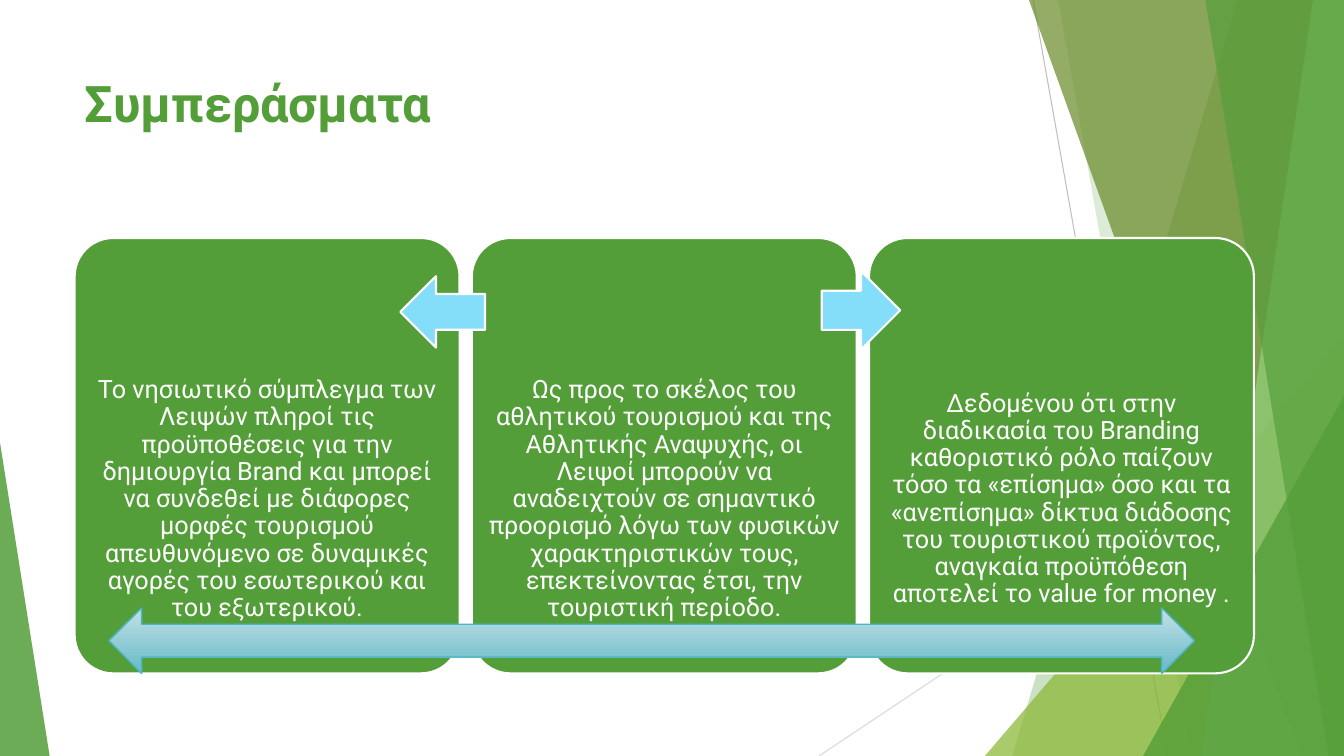
from lxml import etree
from pptx import Presentation
from pptx import util as u
from pptx.dml import color
from pptx.enum import shapes, text
from pptx.oxml import ns

HUES = {
    "green": "549E39", "lime": "8AB833", "olive": "678A26", "mint": "93D07D",
    "white": "FFFFFF", "sky": "84DDF9", "teal": "4AB5C4",
    "pale": "C4E1E6", "deep": "71BECB", "grey": "BFBFBF", "light": "D9D9D9",
}
WIDE, HIGH = 960, 540
FORM = shapes.MSO_SHAPE


class Deck:
    font = "Roboto"

    def __init__(self):
        self.show = Presentation()
        self.show.slide_width, self.show.slide_height = u.Pt(WIDE), u.Pt(HIGH)
        self.slide = self.show.slides.add_slide(self.show.slide_layouts[6])

    def hue(self, name):
        return color.RGBColor.from_string(HUES[name])

    def paint(self, item, fill, alpha=100, line=None, width=1.5):
        item.shadow.inherit = False
        item.fill.solid()
        item.fill.fore_color.rgb = self.hue(fill)
        if alpha < 100:
            tone = item._element.spPr.find(".//" + ns.qn("a:srgbClr"))
            etree.SubElement(tone, ns.qn("a:alpha"), val=str(alpha * 1000))
        if line:
            item.line.color.rgb = self.hue(line)
            item.line.width = u.Pt(width)
        else:
            item.line.fill.background()

    def shape(self, form, box, fill, adjust=None, **style):
        item = self.slide.shapes.add_shape(form, *map(u.Pt, box))
        if adjust is not None:
            item.adjustments[0] = adjust
        self.paint(item, fill, **style)
        return item

    def band(self, top, base, fill, alpha):
        ends = [(top, 0), (WIDE, 0), (WIDE, HIGH), (base, HIGH)]
        spots = [(u.Pt(x), u.Pt(y)) for x, y in ends]
        draft = self.slide.shapes.build_freeform(*spots[0])
        draft.add_line_segments(spots[1:], close=True)
        self.paint(draft.convert_to_shape(), fill, alpha)

    def line(self, ends, hue):
        item = self.slide.shapes.add_connector(
            shapes.MSO_CONNECTOR.STRAIGHT, *map(u.Pt, ends))
        item.line.color.rgb = self.hue(hue)
        item.line.width = u.Pt(0.75)
        etree.SubElement(item._element.spPr, ns.qn("a:effectLst"))

    def blend(self, item, first, last):
        item.fill.gradient()
        item.fill.gradient_angle = 270
        for stop, name, place in zip(item.fill.gradient_stops, (first, last), (0, 0.88)):
            stop.color.rgb = self.hue(name)
            stop.position = place

    def text(self, box, words, size, hue, bold=False, mid=False):
        item = self.slide.shapes.add_textbox(*map(u.Pt, box))
        frame = item.text_frame
        frame.word_wrap = True
        frame.text = words
        para = frame.paragraphs[0]
        if mid:
            frame.vertical_anchor = text.MSO_ANCHOR.MIDDLE
            frame.margin_left = frame.margin_right = u.Pt(10)
            frame.margin_top = frame.margin_bottom = u.Pt(10)
            para.alignment = text.PP_ALIGN.CENTER
            para.line_spacing = 0.9
        font = para.runs[0].font
        font.name, font.size, font.bold = self.font, u.Pt(size), bold
        font.color.rgb = self.hue(hue)


CARDS = [
    "Το νησιωτικό σύμπλεγμα των Λειψών πληροί τις προϋποθέσεις για την "
    "δημιουργία Brand και μπορεί να συνδεθεί με διάφορες μορφές τουρισμού "
    "απευθυνόμενο σε δυναμικές αγορές του εσωτερικού και του εξωτερικού.",
    "Ως προς το σκέλος του αθλητικού τουρισμού και της Αθλητικής Αναψυχής, "
    "οι Λειψοί μπορούν να αναδειχτούν σε σημαντικό προορισμό λόγω των φυσικών "
    "χαρακτηριστικών τους, επεκτείνοντας έτσι, την τουριστική περίοδο.",
    "Δεδομένου ότι στην διαδικασία του Branding καθοριστικό ρόλο παίζουν "
    "τόσο τα «επίσημα» όσο και τα «ανεπίσημα» δίκτυα διάδοσης του τουριστικού "
    "προϊόντος, αναγκαία προϋπόθεση αποτελεί το value for money .",
]


def main():
    deck = Deck()
    deck.line((738, 0, 834, HIGH), "grey")
    deck.line((WIDE, 290, 585, HIGH), "light")
    deck.band(884, 723, "green", 30)
    deck.band(756, 851, "green", 20)
    deck.shape(FORM.ISOSCELES_TRIANGLE, (703.5, 240, 256.5, 300), "lime", 1, alpha=72)
    deck.band(735, 929.5, "olive", 70)
    deck.band(938, 858, "mint", 70)
    deck.band(861, 949, "green", 65)
    deck.shape(FORM.ISOSCELES_TRIANGLE, (816.5, 283, 143.5, 257), "green", 1, alpha=80)
    deck.shape(FORM.ISOSCELES_TRIANGLE, (0, 316, 35.5, 224), "green", 0, alpha=85)

    deck.text((53.3, 48.2, 677, 86), "Συμπεράσματα", 36, "green", bold=True)

    for i, words in enumerate(CARDS):
        left = 53.3 + 283.7 * i
        deck.shape(FORM.ROUNDED_RECTANGLE, (left, 170, 275, 311), "green", 0.1, line="white")
        deck.text((left, 294.5, 275, 124.5), words, 18, "white", mid=True)

    deck.shape(FORM.LEFT_ARROW, (286, 197.3, 60.5, 51), "sky", line="white")
    deck.shape(FORM.RIGHT_ARROW, (587, 193.7, 56, 56), "sky", line="white")
    span = deck.shape(FORM.LEFT_RIGHT_ARROW, (77.8, 434.2, 775.4, 46.8), "pale",
                      line="teal", width=1)
    deck.blend(span, "pale", "deep")
    deck.show.save("out.pptx")


if __name__ == "__main__":
    main()
